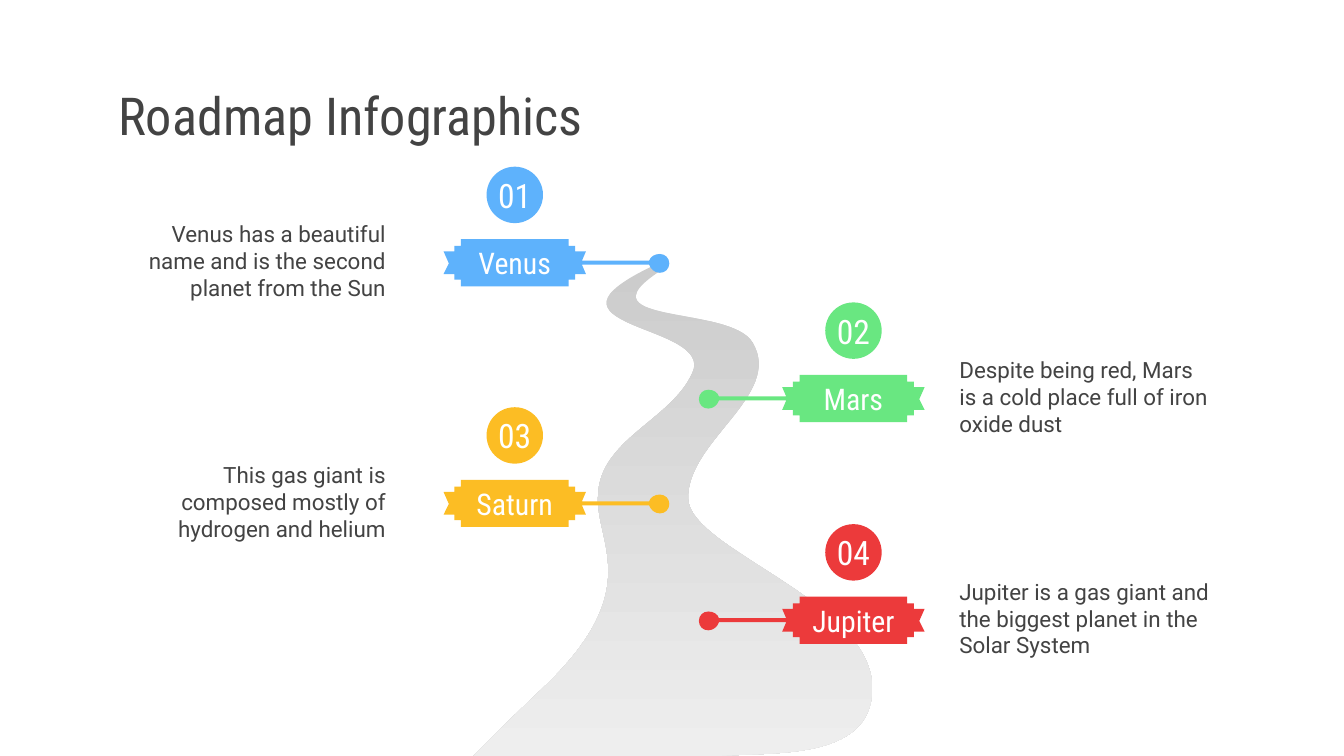
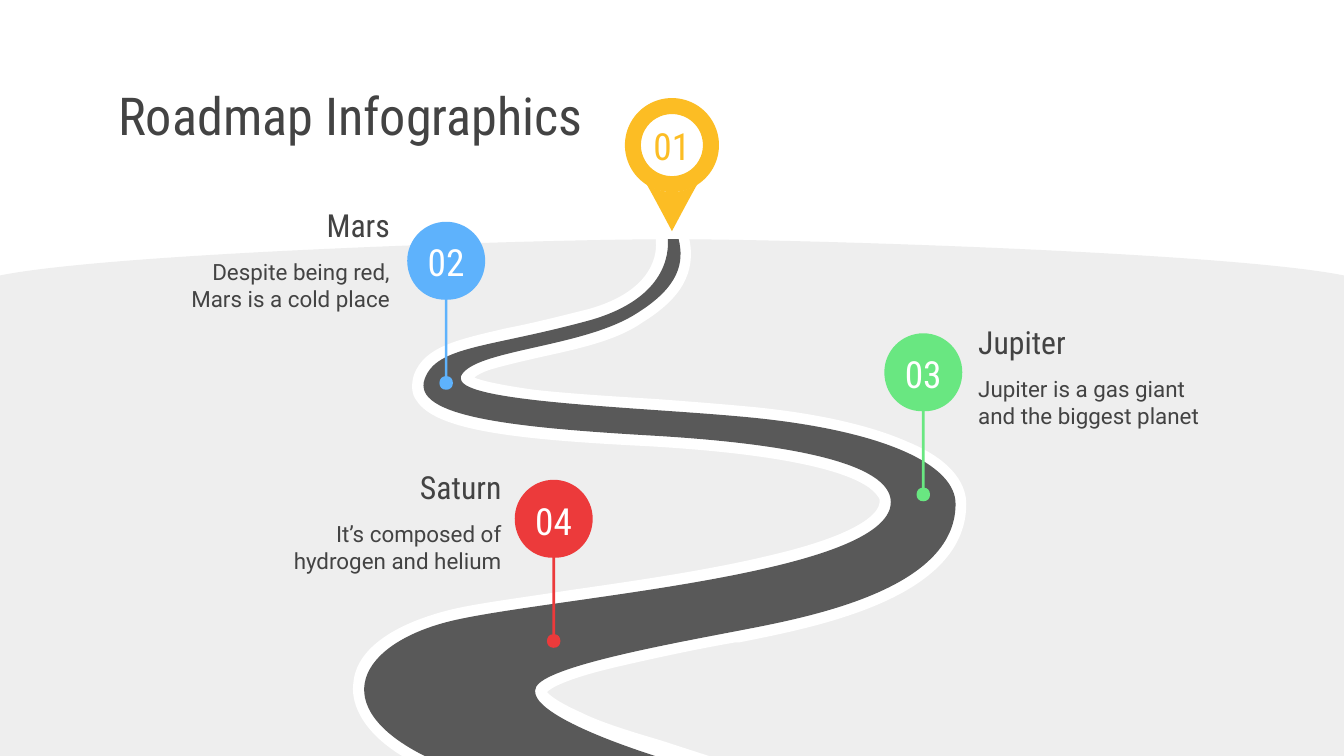
from pptx import Presentation
from pptx.dml.color import RGBColor
from pptx.enum.shapes import MSO_SHAPE
from pptx.enum.text import MSO_ANCHOR as ANCHOR, MSO_AUTO_SIZE, PP_ALIGN as ALIGN
from pptx.oxml.xmlchemy import OxmlElement
from pptx.util import Emu, Inches, Pt

SLIDE_W = Inches(10)
SLIDE_H = SLIDE_W * 9 // 16
COLUMN = SLIDE_W // 10  # grid cells are square: a row is as high as a column is wide

BLUE, GREEN, YELLOW, RED = "5EB2FC", "69E781", "FCBD24", "EC3A3B"
INK, WHITE, HILL, ASPHALT = "434343", "FFFFFF", "EEEEEE", "595959"
ROAD_FAR, ROAD_NEAR = "CCCCCC", "EEEEEE"
HEAD_FONT, BODY_FONT = "Roboto Condensed", "Roboto"

# Outlines: a start point, then lines (x, y) and cubic curves (x1, y1, x2, y2, x, y)
WINDING_ROAD = [
    (4.9, 1.96), (3.83, 2.45, 5.34, 2.4, 5.15, 2.78), (4.99, 3.13, 4.46, 3.27, 4.45, 3.69),
    (4.43, 4.04, 4.81, 4.39, 4.04, 5.12), (3.65, 5.49, 3.52, 5.63, 3.52, 5.63),
    (5.29, 5.63), (5.71, 5.59, 6.49, 5.68, 6.49, 5.12), (6.49, 4.47, 5.13, 4.09, 5.12, 3.71),
    (5.11, 3.28, 5.83, 2.94, 5.6, 2.55), (5.43, 2.26, 4.23, 2.43, 4.97, 1.98),
    (4.94, 1.98, 4.91, 1.96, 4.9, 1.96),
]
HILLSIDE = [
    (5, 1.78), (4.02, 1.78, 0.84, 1.88, 0, 2.05), (0, 5.63), (10, 5.63), (10, 2.05),
    (9.16, 1.88, 5.98, 1.78, 5, 1.78),
]
ROAD_VERGE = [
    (4.88, 1.78), (4.88, 1.79), (4.89, 1.87, 4.88, 2.16, 4.38, 2.3),
    (4.14, 2.36, 3.94, 2.41, 3.78, 2.44), (3.39, 2.53, 3.16, 2.58, 3.08, 2.79),
    (3.06, 2.86, 3.06, 2.93, 3.1, 2.98), (3.24, 3.2, 3.81, 3.27, 4.82, 3.32),
    (6.2, 3.4, 6.47, 3.6, 6.53, 3.69), (6.55, 3.71, 6.55, 3.73, 6.54, 3.76),
    (6.52, 3.83, 6.38, 3.98, 5.74, 4.13), (5.29, 4.24, 4.74, 4.32, 4.25, 4.39),
    (3.87, 4.45, 3.54, 4.49, 3.34, 4.54), (2.91, 4.65, 2.65, 4.84, 2.63, 5.08),
    (2.61, 5.21, 2.67, 5.43, 3, 5.63), (5.29, 5.63), (4.92, 5.51),
    (4.65, 5.43, 4.46, 5.37, 4.32, 5.3), (4.12, 5.21, 4.08, 5.16, 4.07, 5.15),
    (4.09, 5.13, 4.17, 5.06, 4.6, 4.96), (4.86, 4.9, 5.18, 4.83, 5.47, 4.78), (5.5, 4.78),
    (6.05, 4.67, 7.19, 4.46, 7.19, 3.75), (7.19, 3.63, 7.12, 3.44, 6.76, 3.29),
    (6.49, 3.17, 6.11, 3.08, 5.62, 3.03), (5.41, 3.01, 5.16, 2.99, 4.89, 2.97),
    (4.57, 2.95, 4.24, 2.93, 3.97, 2.9), (3.69, 2.86, 3.58, 2.83, 3.53, 2.81),
    (3.55, 2.79, 3.59, 2.77, 3.65, 2.75), (3.75, 2.72, 3.88, 2.69, 4.01, 2.66),
    (4.28, 2.6, 4.58, 2.54, 4.78, 2.4), (5.07, 2.22, 5.18, 2.03, 5.13, 1.78),
]
ROADWAY = [
    (4.97, 1.78), (4.98, 1.97, 4.88, 2.24, 4.4, 2.38), (3.64, 2.59, 3.25, 2.57, 3.16, 2.82),
    (3.06, 3.1, 3.81, 3.18, 4.83, 3.24), (6.06, 3.31, 6.71, 3.49, 6.62, 3.79),
    (6.45, 4.29, 4.08, 4.45, 3.36, 4.62), (2.66, 4.79, 2.42, 5.26, 3.17, 5.63),
    (4.89, 5.63), (4.39, 5.47, 3.91, 5.26, 3.99, 5.11), (4.07, 4.96, 4.94, 4.8, 5.46, 4.7),
    (5.98, 4.6, 7.11, 4.4, 7.11, 3.75), (7.11, 3.46, 6.59, 3.21, 5.62, 3.11),
    (4.83, 3.03, 3.44, 3, 3.43, 2.82), (3.43, 2.81, 3.43, 2.81, 3.43, 2.8),
    (3.52, 2.6, 4.34, 2.59, 4.74, 2.33), (5.06, 2.13, 5.09, 1.95, 5.05, 1.78),
]
GOAL_TAIL = [
    (4.81, 1.37), (4.82, 1.38, 5, 1.72, 5, 1.72), (5, 1.72, 5.18, 1.38, 5.19, 1.37),
    (5.14, 1.4, 5.07, 1.43, 5, 1.43), (4.93, 1.43, 4.86, 1.4, 4.81, 1.37),
]
# The next two are measured from the middle of their top edge
TAG = [
    (-0.4, 0), (-0.4, 0.05), (-0.45, 0.05), (-0.45, 0.09), (-0.53, 0.09), (-0.49, 0.18),
    (-0.53, 0.26), (-0.45, 0.26), (-0.45, 0.3), (-0.4, 0.3), (-0.4, 0.35),
    (0.4, 0.35), (0.4, 0.3), (0.45, 0.3), (0.45, 0.26), (0.53, 0.26), (0.5, 0.19), (1, 0.19),
    (1.01, 0.22, 1.04, 0.25, 1.08, 0.25), (1.12, 0.25, 1.15, 0.22, 1.15, 0.18),
    (1.15, 0.14, 1.12, 0.11, 1.08, 0.11), (1.04, 0.11, 1.01, 0.13, 1, 0.16),
    (0.5, 0.16), (0.53, 0.09), (0.45, 0.09), (0.45, 0.05), (0.4, 0.05), (0.4, 0),
]
PIN = [
    (0, 0), (-0.16, 0, -0.29, 0.13, -0.29, 0.29), (-0.29, 0.45, -0.17, 0.58, -0.01, 0.58),
    (-0.01, 1.15), (-0.03, 1.15, -0.05, 1.17, -0.05, 1.2), (-0.05, 1.23, -0.03, 1.25, 0, 1.25),
    (0.03, 1.25, 0.05, 1.23, 0.05, 1.2), (0.05, 1.17, 0.03, 1.15, 0.01, 1.15),
    (0.01, 0.58), (0.17, 0.58, 0.29, 0.45, 0.29, 0.29), (0.29, 0.13, 0.16, 0, 0, 0),
]

# number, name, text, colour, is left of the road, top of the tag
TAGS = [
    ("01", "Venus", "Venus has a beautiful name and is the second planet from the Sun", BLUE, True, 1.78),
    ("03", "Saturn", "This gas giant is composed mostly of hydrogen and helium", YELLOW, True, 3.57),
    ("02", "Mars", "Despite being red, Mars is a cold place full of iron oxide dust", GREEN, False, 2.79),
    ("04", "Jupiter", "Jupiter is a gas giant and the biggest planet in the Solar System", RED, False, 4.44),
]
# number, name, text, colour, middle and top of the pin, corner of the text, alignment
PINS = [
    ("04", "Saturn", "It’s composed of hydrogen and helium", RED, (4.12, 3.57), (1.94, 3.39), ALIGN.RIGHT),
    ("02", "Mars", "Despite being red, Mars is a cold place", BLUE, (3.32, 1.65), (1.11, 1.44), ALIGN.RIGHT),
    ("03", "Jupiter", "Jupiter is a gas giant and the biggest planet", GREEN, (6.87, 2.48), (7.18, 2.31), ALIGN.LEFT),
]


def grid(*cells):
    return [Emu(round(cell * COLUMN)) for cell in cells]


def rgb(color):
    return RGBColor.from_string(color)


def set_all(target, values):
    for attribute, value in values.items():
        setattr(target, attribute, value)


def write(shape, text, size, color, font=HEAD_FONT, align=ALIGN.CENTER,
          anchor=ANCHOR.MIDDLE, inset=0.0, wrap=True):
    frame = shape.text_frame
    margins = dict.fromkeys(("margin_left", "margin_top", "margin_right", "margin_bottom"), Inches(inset))
    set_all(frame, {"auto_size": MSO_AUTO_SIZE.NONE, "word_wrap": wrap,
                    "vertical_anchor": anchor, **margins})
    paragraph = frame.paragraphs[0]
    paragraph.alignment = align
    run = paragraph.add_run()
    run.text = text
    set_all(run.font, {"name": font, "size": Pt(size)})
    run.font.color.rgb = rgb(color)


def paint(shape, color):
    shape.shadow.inherit = False
    shape.line.fill.background()
    shape.fill.solid()
    shape.fill.fore_color.rgb = rgb(color)
    return shape


def pairs(segment):
    return list(zip(segment[::2], segment[1::2]))


def move(outline, x, y, mirror=1):
    """Set an outline down at a point; a mirror of -1 turns it left to right."""
    return [tuple(value for dx, dy in pairs(segment) for value in (x + mirror * dx, y + dy))
            for segment in outline]


def add_outline(shapes, outline, color):
    corners = [grid(*segment[-2:]) for segment in outline]
    builder = shapes.build_freeform(*corners[0])
    builder.add_line_segments(corners[1:], close=True)
    shape = builder.convert_to_shape()
    for line, segment in zip(shape._element.xpath(".//a:lnTo"), outline[1:]):
        if len(segment) == 6:
            curve = OxmlElement("a:cubicBezTo")
            for point in pairs(segment):
                x, y = grid(*point)
                handle = OxmlElement("a:pt")
                handle.set("x", str(x - shape.left))
                handle.set("y", str(y - shape.top))
                curve.append(handle)
            line.getparent().replace(line, curve)
    return paint(shape, color)


def add_text(shapes, box, text, size, color, **style):
    write(shapes.add_textbox(*grid(*box)), text, size, color, **style)


def add_titled_slide(deck):
    slide = deck.slides.add_slide(deck.slide_layouts[5])
    title = slide.shapes.title
    set_all(title, dict(zip(("left", "top", "width", "height"), grid(0.78, 0.59, 8.45, 0.53))))
    write(title, "Roadmap Infographics", 28, INK, align=ALIGN.LEFT, inset=0.1)
    return slide


def add_body(shapes, box, text, align):
    add_text(shapes, box, text, 12, INK, font=BODY_FONT, align=align, anchor=ANCHOR.TOP, inset=0.1)


def add_tag(slide, number, name, text, color, on_left, top):
    middle, text_left, mirror, align = (
        (3.83, 0.91, 1, ALIGN.RIGHT) if on_left else (6.35, 7.04, -1, ALIGN.LEFT))
    shapes = slide.shapes.add_group_shape().shapes
    add_outline(shapes, move(TAG, middle, top, mirror), color)
    disc = shapes.add_shape(MSO_SHAPE.OVAL, *grid(middle - 0.21, top - 0.54, 0.42, 0.42))
    write(paint(disc, color), number, 18, WHITE, wrap=False)
    add_text(shapes, (middle - 0.38, top + 0.02, 0.76, 0.31), name, 16, WHITE)
    add_body(shapes, (text_left, top - 0.24, 2.06, 0.84), text, align)


def add_pin(slide, number, name, text, color, pin, corner, align):
    middle, top = pin
    left, text_top = corner
    shapes = slide.shapes.add_group_shape().shapes
    add_outline(shapes, move(PIN, middle, top), color)
    add_text(shapes, (middle - 0.32, top + 0.12, 0.64, 0.36), number, 20, WHITE)
    add_text(shapes, (left, text_top, 1.89, 0.47), name, 17, INK, align=align, inset=0.1)
    add_body(shapes, (left, text_top + 0.38, 1.89, 0.58), text, align)


def add_goal_pin(slide):
    shapes = slide.shapes.add_group_shape().shapes
    add_outline(shapes, GOAL_TAIL, YELLOW)
    ring = paint(shapes.add_shape(MSO_SHAPE.DONUT, *grid(4.65, 0.73, 0.7, 0.7)), YELLOW)
    ring.adjustments[0] = 0.17
    add_text(shapes, (4.68, 0.9, 0.64, 0.36), "01", 20, YELLOW)


def add_winding_road(slide):
    fill = add_outline(slide.shapes, WINDING_ROAD, ROAD_FAR).fill
    fill.gradient()
    fill.gradient_angle = 270
    for stop, position, color in zip(fill.gradient_stops, (0, 1), (ROAD_FAR, ROAD_NEAR)):
        stop.position = position
        stop.color.rgb = rgb(color)


def main():
    deck = Presentation()
    set_all(deck, {"slide_width": SLIDE_W, "slide_height": SLIDE_H})

    tag_slide = add_titled_slide(deck)
    add_winding_road(tag_slide)
    for tag in TAGS:
        add_tag(tag_slide, *tag)

    pin_slide = add_titled_slide(deck)
    for outline, color in ((HILLSIDE, HILL), (ROAD_VERGE, WHITE), (ROADWAY, ASPHALT)):
        add_outline(pin_slide.shapes, outline, color)
    for pin in PINS:
        add_pin(pin_slide, *pin)
    add_goal_pin(pin_slide)

    deck.save("out.pptx")


if __name__ == "__main__":
    main()
